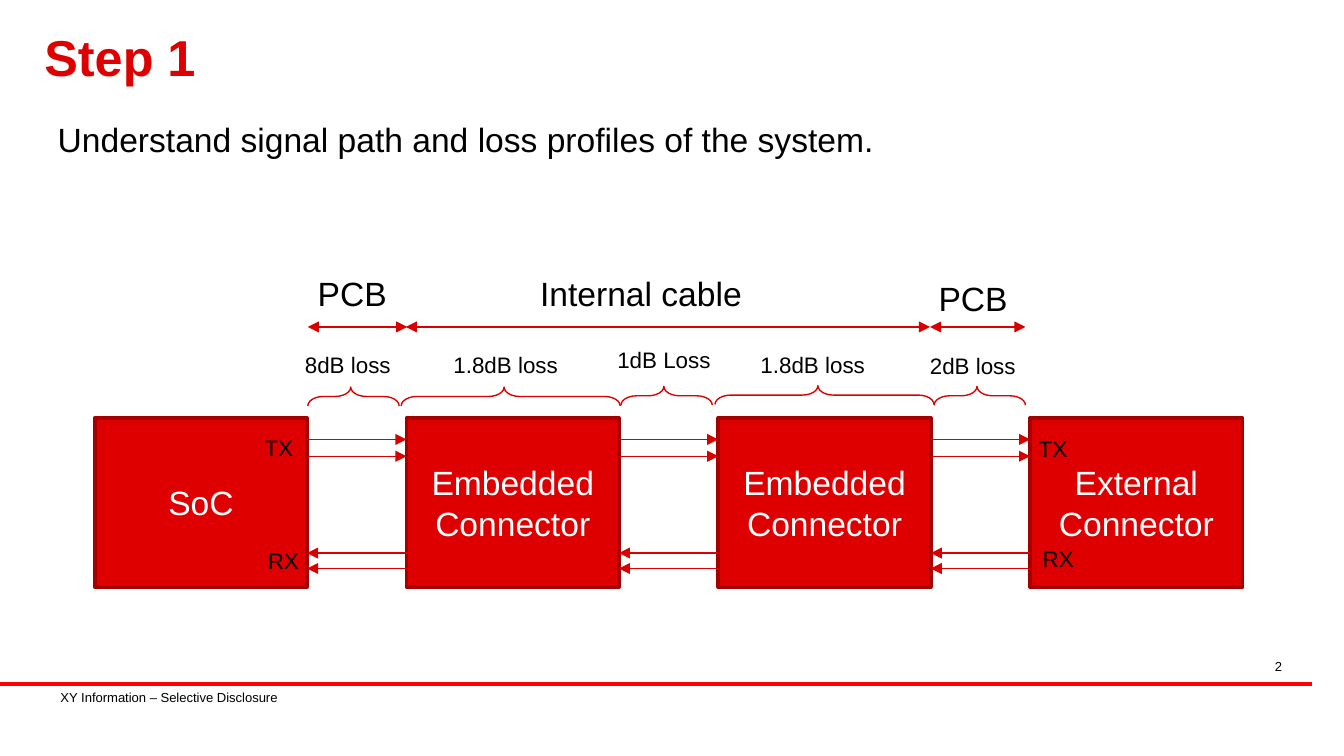
import pptx
import pptx.dml.color
import pptx.enum.shapes
import pptx.enum.text
import pptx.oxml.ns
import pptx.util
from lxml import etree

hex_colour = pptx.dml.color.RGBColor.from_string
qualified = pptx.oxml.ns.qn
shapes_enum = pptx.enum.shapes.MSO_SHAPE
align = pptx.enum.text.PP_ALIGN
anchor = pptx.enum.text.MSO_ANCHOR

presentation = pptx.Presentation()
presentation.slide_width = pptx.util.Inches(10)
presentation.slide_height = presentation.slide_width * 9 // 16
slide = presentation.slides.add_slide(presentation.slide_layouts[5])
cell = presentation.slide_width / 100


def write_text(shape, text, size, colour="000000", bold=False, frame_format=None, paragraph_format=None):
    frame = shape.text_frame
    frame.text = text
    for name, value in (frame_format or {}).items():
        setattr(frame, name, value)
    for paragraph in frame.paragraphs:
        for name, value in (paragraph_format or {}).items():
            setattr(paragraph, name, value)
        font_format = {"name": "Arial", "size": pptx.util.Pt(size), "bold": bold}
        for name, value in font_format.items():
            setattr(paragraph.font, name, value)
        paragraph.font.color.rgb = hex_colour(colour)


def draw_line(start, end, row, colour="D90000", width=0.75, arrows=()):
    line = slide.shapes.add_connector(
        pptx.enum.shapes.MSO_CONNECTOR.STRAIGHT,
        *[int(value * cell) for value in (start, row, end, row)])
    line.line.color.rgb = hex_colour(colour)
    line.line.width = pptx.util.Pt(width)
    for arrow in arrows:
        etree.SubElement(line.line._get_or_add_ln(), qualified("a:" + arrow), type="triangle")
    etree.SubElement(line._element.spPr, qualified("a:effectLst"))


draw_line(0, 97.6, 50.9, "FF0000", 2.25)

title = slide.shapes.title
title_place = {"left": 2.5, "top": 1.2, "width": 92.5, "height": 6.7}
for name, value in title_place.items():
    setattr(title, name, int(value * cell))

margins = {"margin_left": int(0.8 * cell), "margin_right": int(0.8 * cell),
           "margin_top": int(0.4 * cell), "margin_bottom": int(0.4 * cell),
           "word_wrap": True}
write_text(title, "Step 1", 27, "DE0000", True,
           {**margins, "vertical_anchor": anchor.MIDDLE},
           {"alignment": align.LEFT, "line_spacing": 0.85})

for text, size, place, alignment in [
    ("Understand signal path and loss profiles of the system.", 18, (3.5, 8.45, 92.6, 19.3), align.LEFT),
    ("XY Information – Selective Disclosure", 7, (3.7, 50.9, 23.1, 2), align.LEFT),
    ("2", 7, (72.9, 48.6, 23.3, 1.7), align.RIGHT),
]:
    box = slide.shapes.add_textbox(*[int(value * cell) for value in place])
    write_text(box, text, size, frame_format=margins, paragraph_format={"alignment": alignment})

block_left, block_top, block_width, block_height, block_pitch = 7.05, 31.1, 15.8, 12.6, 23.2
block_names = ["SoC", "Embedded\nConnector", "Embedded\nConnector", "External\nConnector"]
for index, block_name in enumerate(block_names):
    left = block_left + index * block_pitch
    block = slide.shapes.add_shape(
        shapes_enum.RECTANGLE,
        *[int(value * cell) for value in (left, block_top, block_width, block_height)])
    block.shadow.inherit = False
    block.fill.solid()
    block.fill.fore_color.rgb = hex_colour("DE0000")
    block.line.color.rgb = hex_colour("A40000")
    block.line.width = pptx.util.Pt(2)
    write_text(block, block_name, 18, "FFFFFF",
               frame_format={"vertical_anchor": anchor.MIDDLE},
               paragraph_format={"alignment": align.CENTER})

for index in range(len(block_names) - 1):
    gap_start = block_left + block_width + index * block_pitch
    gap_end = block_left + (index + 1) * block_pitch
    for row in (32.7, 33.95):
        draw_line(gap_start, gap_end, row, arrows=["tailEnd"])
    for row in (41.15, 42.3):
        draw_line(gap_end, gap_start, row, arrows=["tailEnd"])

brace_depth = 1.4
for centre, middle, span in [(26.3, 29.5, 6.8), (49.6, 29.45, 6.8), (72.9, 29.45, 6.8),
                             (38, 29.5, 16.3), (61.35, 29.4, 16.3)]:
    brace = slide.shapes.add_shape(
        shapes_enum.RIGHT_BRACE,
        *[int(value * cell) for value in
          (centre - brace_depth / 2, middle - span / 2, brace_depth, span)])
    brace.rotation = 270
    brace.adjustments[0] = 0.83
    brace.adjustments[1] = 0.47
    brace.shadow.inherit = False
    brace.fill.background()
    brace.line.color.rgb = hex_colour("D90000")
    brace.line.width = pptx.util.Pt(0.75)

for start, end in [(22.9, 30.3), (30.2, 69.2), (69.2, 76.3)]:
    draw_line(start, end, 24.33, arrows=["headEnd", "tailEnd"])

for text, size, left, top, width in [
    ("8dB loss", 12, 21.7, 25.65, 8.5),
    ("1.8dB loss", 12, 32.75, 25.65, 9.9),
    ("1dB Loss", 12, 44.95, 25.3, 9),
    ("1.8dB loss", 12, 55.6, 25.65, 9.9),
    ("2dB loss", 12, 68.2, 25.7, 8.5),
    ("TX", 12, 18.7, 31.8, 4.2),
    ("RX", 12, 18.95, 40.2, 4.4),
    ("TX", 12, 76.3, 31.9, 4.2),
    ("RX", 12, 76.6, 40.1, 4.4),
    ("PCB", 18, 22.65, 19.8, 7.2),
    ("Internal cable", 18, 39.2, 19.8, 17.2),
    ("PCB", 18, 68.85, 20.2, 7.2),
]:
    height = 3 if size == 12 else 4
    label = slide.shapes.add_textbox(*[int(value * cell) for value in (left, top, width, height)])
    write_text(label, text, size, frame_format={
        "word_wrap": False, "auto_size": pptx.enum.text.MSO_AUTO_SIZE.SHAPE_TO_FIT_TEXT})

presentation.save("out.pptx")
